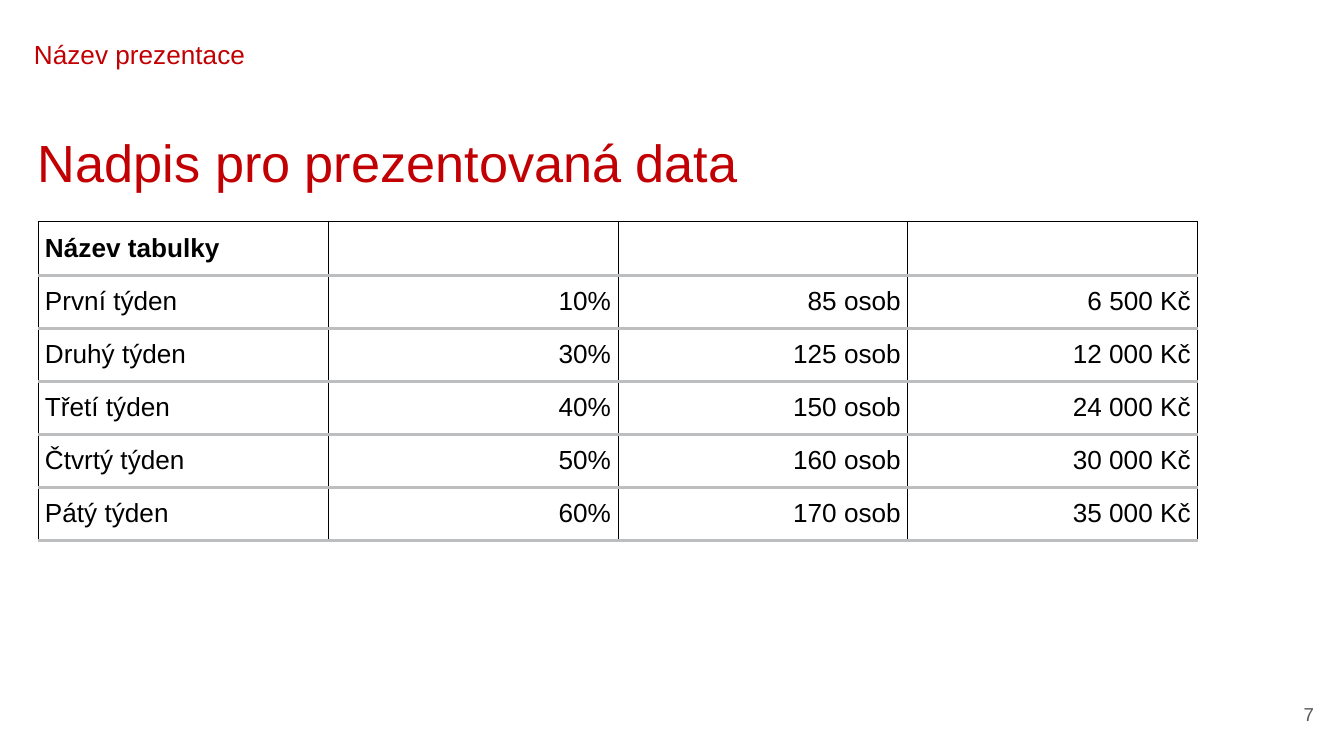
from lxml import etree
from pptx import Presentation
from pptx.dml.color import RGBColor
from pptx.enum.text import MSO_ANCHOR, PP_ALIGN
from pptx.oxml.ns import qn
from pptx.util import Pt

PX = 914400 / 134.4
LEFT, RIGHT = PP_ALIGN.LEFT, PP_ALIGN.RIGHT
TOP, MIDDLE = MSO_ANCHOR.TOP, MSO_ANCHOR.MIDDLE
FONT = "Arial"
COLORS = {
    "red": "C20003",
    "black": "000000",
    "white": "FFFFFF",
    "rule": "BCBEC0",
    "number": "585858",
}
COLUMN_WIDTH, ROW_HEIGHT = 290, 53
ROWS = [
    ("Název tabulky", "", "", ""),
    ("První týden", "10%", "85 osob", "6 500 Kč"),
    ("Druhý týden", "30%", "125 osob", "12 000 Kč"),
    ("Třetí týden", "40%", "150 osob", "24 000 Kč"),
    ("Čtvrtý týden", "50%", "160 osob", "30 000 Kč"),
    ("Pátý týden", "60%", "170 osob", "35 000 Kč"),
]


def px(length):
    return round(length * PX)


def set_margins(holder, left, top, right, bottom):
    holder.margin_left, holder.margin_top = px(left), px(top)
    holder.margin_right, holder.margin_bottom = px(right), px(bottom)


def write(frame, text, size, color, align=LEFT, bold=False):
    frame.text = text
    paragraph = frame.paragraphs[0]
    paragraph.alignment = align
    for run in paragraph.runs:
        run.font.name = FONT
        run.font.size = Pt(size)
        run.font.bold = bold
        run.font.color.rgb = RGBColor.from_string(COLORS[color])


def add_label(slide, box, margins, text, size, color,
              align=LEFT, anchor=TOP, wrap=True):
    frame = slide.shapes.add_textbox(*map(px, box)).text_frame
    frame.word_wrap = wrap
    frame.vertical_anchor = anchor
    set_margins(frame, *margins)
    write(frame, text, size, color, align)


def add_border(cell, side, color, width):
    line = etree.SubElement(cell._tc.get_or_add_tcPr(), qn("a:" + side), w=str(Pt(width)))
    fill = etree.SubElement(line, qn("a:solidFill"))
    etree.SubElement(fill, qn("a:srgbClr"), val=COLORS[color])


def style_cell(cell, text, is_header, is_label):
    cell.vertical_anchor = MIDDLE
    set_margins(cell, 7, 7, 7, 7)
    write(cell.text_frame, text, 14, "black", LEFT if is_label else RIGHT, is_header)
    add_border(cell, "lnL", "black", 0.5)
    add_border(cell, "lnR", "black", 0.5)
    if is_header:
        add_border(cell, "lnT", "black", 0.5)
    else:
        add_border(cell, "lnT", "rule", 2)
    add_border(cell, "lnB", "rule", 2)
    if is_header:
        cell.fill.background()
    else:
        cell.fill.solid()
        cell.fill.fore_color.rgb = RGBColor.from_string(COLORS["white"])


def add_data_table(slide, left, top):
    column_count = len(ROWS[0])
    size = (COLUMN_WIDTH * column_count, ROW_HEIGHT * len(ROWS))
    table = slide.shapes.add_table(
        len(ROWS), column_count, *map(px, (left, top, *size))).table
    table.first_row = table.horz_banding = False
    for column in table.columns:
        column.width = px(COLUMN_WIDTH)
    for row_index, values in enumerate(ROWS):
        table.rows[row_index].height = px(ROW_HEIGHT)
        for column_index, value in enumerate(values):
            style_cell(table.cell(row_index, column_index), value,
                       row_index == 0, column_index == 0)


def main():
    presentation = Presentation()
    presentation.slide_width = px(1344)
    presentation.slide_height = px(756)
    slide = presentation.slides.add_slide(presentation.slide_layouts[6])
    add_label(slide, (1277, 691, 50, 47), (13, 13, 13, 13), "7", 10, "number",
              RIGHT, MIDDLE, False)
    add_label(slide, (38, 113, 1111, 85), (0, 17, 13, 13),
              "Nadpis pro prezentovaná data", 28, "red")
    add_label(slide, (17, 38, 1111, 52), (17, 0, 13, 13),
              "Název prezentace", 14, "red")
    add_data_table(slide, 38, 221)
    presentation.save("out.pptx")


if __name__ == "__main__":
    main()
